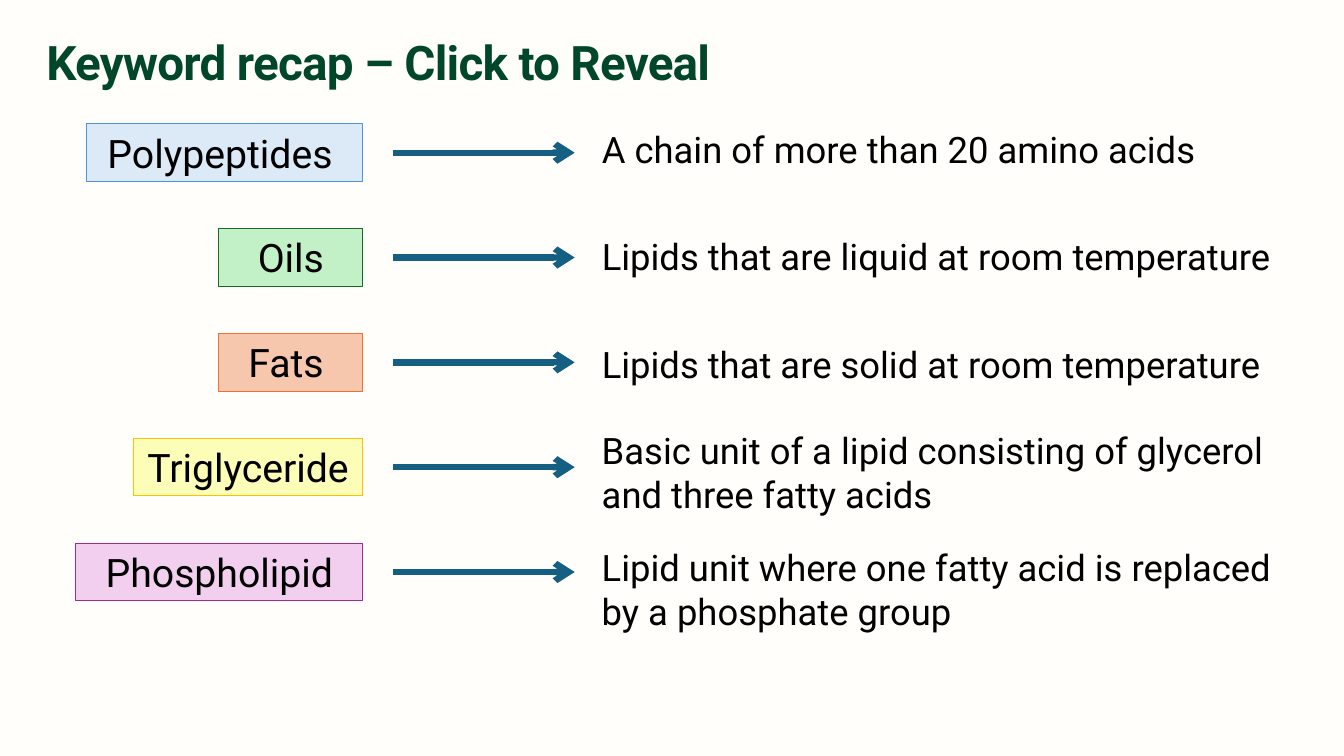
from dataclasses import dataclass

from lxml import etree
from pptx import Presentation
from pptx import util as u
from pptx.dml.color import RGBColor
from pptx.enum import shapes, text
from pptx.oxml.ns import qn


@dataclass(frozen=True)
class Theme:
    """Colours, font and type sizes of the deck."""
    font: str = "Roboto"
    paper: str = "FFFEFA"
    heading: str = "00472A"
    ink: str = "000000"
    arrow: str = "156082"
    title_size: int = 34
    keyword_size: int = 28
    definition_size: int = 26


@dataclass(frozen=True)
class Box:
    """A region of the slide in inches."""
    left: float
    top: float
    width: float
    height: float

    def lengths(self):
        """Return the four sides as slide lengths."""
        return [u.Inches(side) for side in (self.left, self.top, self.width, self.height)]


@dataclass(frozen=True)
class Entry:
    """A keyword with its definition and its row-specific look."""
    keyword: str
    width: float
    fill: str
    line: str
    definition: str
    definition_top: float
    definition_width: float
    definition_height: float = 0.54


THEME = Theme()
TITLE_BOX = Box(0.36, 0.34, 10.1, 0.89)
RECAP_BOX = Box(0.76, 1.23, 12.45, 5.2)
ROW_PITCH = 1.04
KEYWORD_RIGHT = 2.84
KEYWORD_HEIGHT = 0.57
ARROW_LEFT = 3.14
ARROW_LENGTH = 1.8
DEFINITION_LEFT = 5.11
ENTRIES = [
    Entry("Polypeptides ", 2.74, "DCEAF7", "4E95D9",
          "A chain of more than 20 amino acids", -0.02, 6.81),
    Entry("Oils", 1.43, "C2F1C8", "196B24",
          "Lipids that are liquid at room temperature", 0, 7.15),
    Entry("Fats ", 1.43, "F6C6AD", "E97132",
          "Lipids that are solid at room temperature", 0.03, 7.15),
    Entry("Triglyceride ", 2.28, "FCFEB8", "FFC000",
          "Basic unit of a lipid consisting of glycerol and three fatty acids",
          -0.15, 7.34, 0.98),
    Entry("Phospholipid", 2.85, "F2CFEE", "A02B93",
          "Lipid unit where one fatty acid is replaced by a phosphate group",
          -0.03, 7.3, 0.98),
]


def colour(code):
    """Turn a hex code into a colour."""
    return RGBColor.from_string(code)


def write(shape, words, *, size, ink=THEME.ink, bold=False, align=text.PP_ALIGN.LEFT,
          anchor=text.MSO_ANCHOR.TOP, fit=text.MSO_AUTO_SIZE.SHAPE_TO_FIT_TEXT,
          line_spacing=1.0, tracking=0):
    """Fill a shape with one formatted paragraph."""
    frame = shape.text_frame
    frame.word_wrap = True
    frame.auto_size = fit
    frame.vertical_anchor = anchor
    para = frame.paragraphs[0]
    para.alignment = align
    para.line_spacing = line_spacing
    span = para.add_run()
    span.text = words
    span.font.name = THEME.font
    span.font.size = u.Pt(size)
    span.font.bold = bold
    span.font.color.rgb = colour(ink)
    if tracking:
        span.font._element.set("spc", str(round(tracking * 100)))


def add_title(page, box):
    """Place the slide heading in the title placeholder."""
    title = page.shapes.title
    title.left, title.top, title.width, title.height = box.lengths()
    write(title, "Keyword recap – Click to Reveal", size=THEME.title_size,
          ink=THEME.heading, bold=True, fit=text.MSO_AUTO_SIZE.NONE,
          line_spacing=0.9, tracking=-0.5)


def add_keyword(page, box, entry):
    """Draw the coloured keyword label."""
    label = page.shapes.add_shape(shapes.MSO_SHAPE.RECTANGLE, *box.lengths())
    label.shadow.inherit = False
    label.fill.solid()
    label.fill.fore_color.rgb = colour(entry.fill)
    label.line.color.rgb = colour(entry.line)
    label.line.width = u.Pt(0.75)
    write(label, entry.keyword, size=THEME.keyword_size, align=text.PP_ALIGN.CENTER)


def add_arrow(page, left, middle, length):
    """Draw a horizontal arrow pointing right."""
    start, end, level = u.Inches(left), u.Inches(left + length), u.Inches(middle)
    arrow = page.shapes.add_connector(shapes.MSO_CONNECTOR.STRAIGHT, start, level, end, level)
    arrow.line.color.rgb = colour(THEME.arrow)
    arrow.line.width = u.Pt(4.5)
    etree.SubElement(arrow.line._get_or_add_ln(), qn("a:tailEnd"), type="arrow")
    etree.SubElement(arrow._element.spPr, qn("a:effectLst"))


def add_recap(page, box):
    """Place a row of keyword, arrow and definition for each entry."""
    for index, entry in enumerate(ENTRIES):
        top = box.top + index * ROW_PITCH
        keyword_left = box.left + KEYWORD_RIGHT - entry.width
        add_keyword(page, Box(keyword_left, top, entry.width, KEYWORD_HEIGHT), entry)
        add_arrow(page, box.left + ARROW_LEFT, top + KEYWORD_HEIGHT / 2, ARROW_LENGTH)
        place = Box(box.left + DEFINITION_LEFT, top + entry.definition_top,
                    entry.definition_width, entry.definition_height)
        definition = page.shapes.add_textbox(*place.lengths())
        write(definition, entry.definition, size=THEME.definition_size)


def main():
    """Build and save the deck."""
    deck = Presentation()
    deck.slide_width, deck.slide_height = u.Inches(13.33), u.Inches(7.5)
    page = deck.slides.add_slide(deck.slide_layouts.get_by_name("Title Only"))
    page.background.fill.solid()
    page.background.fill.fore_color.rgb = colour(THEME.paper)
    add_recap(page, RECAP_BOX)
    add_title(page, TITLE_BOX)
    deck.save("out.pptx")


if __name__ == "__main__":
    main()
